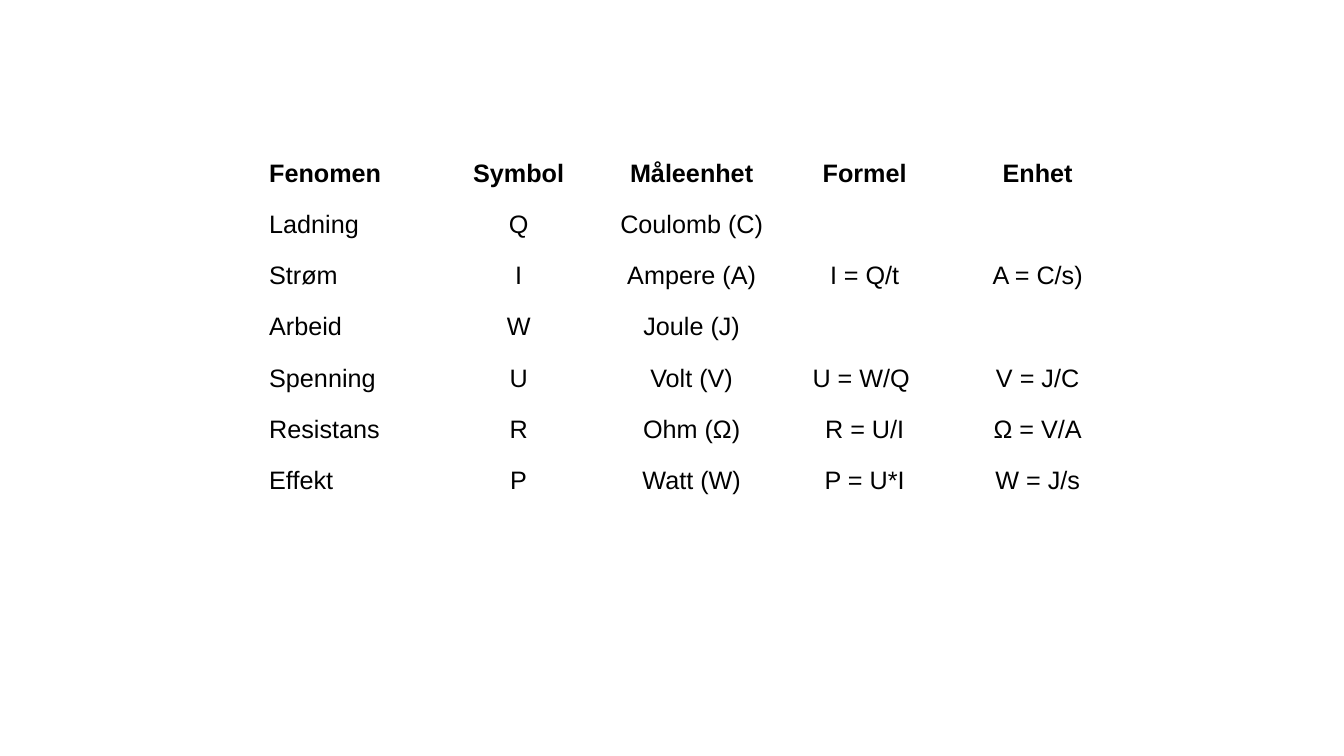
from dataclasses import dataclass

from lxml import etree
from pptx import Presentation
from pptx.dml.color import RGBColor
from pptx.enum.text import MSO_ANCHOR, PP_ALIGN
from pptx.oxml.ns import qn
from pptx.util import Cm, Pt

LEFT, CENTER = PP_ALIGN.LEFT, PP_ALIGN.CENTER
TOP = MSO_ANCHOR.TOP


@dataclass(frozen=True)
class Theme:
    font: str = "Arial"
    size: int = 18
    ink: str = "000000"
    paper: str = "FFFFFF"
    band: int = 20  # percent opacity of the banded rows
    thin: int = 1
    thick: int = 2


THEME = Theme()

ROWS = [
    ("Fenomen", "Symbol", "Måleenhet", "Formel", "Enhet"),
    ("Ladning", "Q", "Coulomb (C)", "", ""),
    ("Strøm", "I", "Ampere (A)", "I = Q/t", "A = C/s)"),
    ("Arbeid", "W", "Joule (J)", "", ""),
    ("Spenning", "U", "Volt (V)", "U = W/Q ", "V = J/C"),
    ("Resistans", "R", "Ohm (Ω)", "R = U/I", "Ω = V/A"),
    ("Effekt", "P", "Watt (W)", "P = U*I", "W = J/s"),
]


def write(frame, text, *, bold=False, align=LEFT):
    para = frame.paragraphs[0]
    para.alignment = align
    para.font.size = Pt(THEME.size)
    if not text:
        return
    run = para.add_run()
    run.text = text
    run.font.name = THEME.font
    run.font.size = Pt(THEME.size)
    run.font.bold = bold
    run.font.color.rgb = RGBColor.from_string(THEME.ink)


def add_color(parent, color):
    solid = etree.SubElement(parent, qn("a:solidFill"))
    return etree.SubElement(solid, qn("a:srgbClr"), val=color)


def set_edges(cell, row):
    """Draw the cell borders, with a thick rule under the header."""
    widths = {
        "L": THEME.thin,
        "R": THEME.thin,
        "T": THEME.thick if row == 1 else THEME.thin,
        "B": THEME.thick if row == 0 else THEME.thin,
    }
    props = cell._tc.get_or_add_tcPr()
    for side, width in widths.items():
        line = etree.SubElement(props, qn(f"a:ln{side}"), w=str(Pt(width)))
        add_color(line, THEME.paper)


def set_fill(cell, row):
    """Tint every second row and leave the others clear."""
    if row % 2 == 0:
        cell.fill.background()
        return
    color = add_color(cell._tc.get_or_add_tcPr(), THEME.paper)
    etree.SubElement(color, qn("a:alpha"), val=str(THEME.band * 1000))


def add_grid(slide, rows, left, top, width, height):
    """Place the table of units in the given box."""
    table = slide.shapes.add_table(
        len(rows), len(rows[0]), left, top, width, height
    ).table
    for r, texts in enumerate(rows):
        for c, text in enumerate(texts):
            cell = table.cell(r, c)
            cell.vertical_anchor = TOP
            set_edges(cell, r)
            set_fill(cell, r)
            write(cell.text_frame, text, bold=r == 0,
                  align=CENTER if c else LEFT)


def main():
    deck = Presentation()
    deck.slide_width, deck.slide_height = Cm(33.87), Cm(19.05)
    slide = deck.slides.add_slide(deck.slide_layouts[6])

    # Page colour
    page = slide.background.fill
    page.solid()
    page.fore_color.rgb = RGBColor.from_string(THEME.paper)

    # Table of electrical units
    add_grid(slide, ROWS, Cm(6.53), Cm(3.89), Cm(21.8), Cm(9.04))

    deck.save("out.pptx")


if __name__ == "__main__":
    main()
